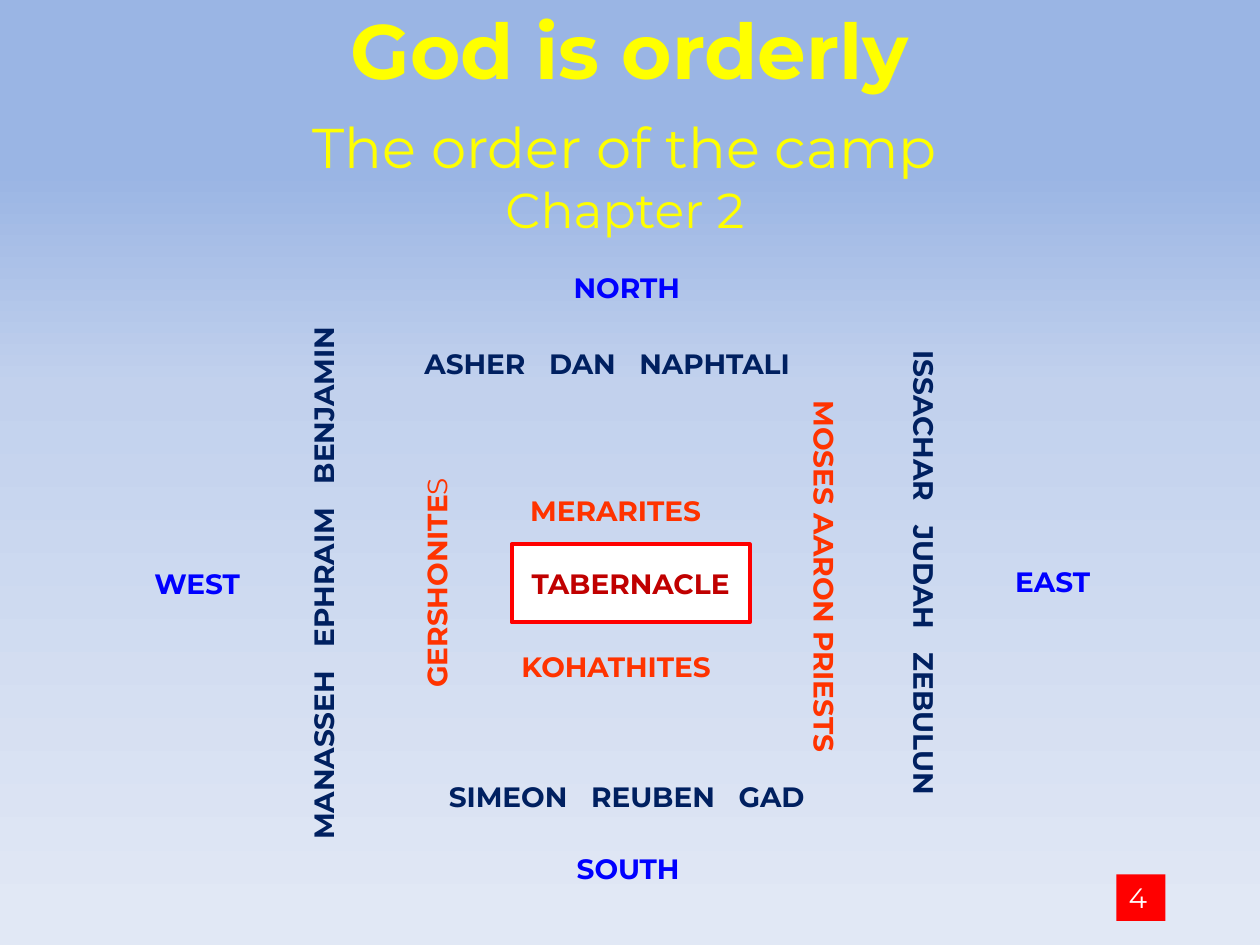
import copy

import pptx
import pptx.dml.color
import pptx.enum.shapes
import pptx.enum.text
import pptx.util

RGB = pptx.dml.color.RGBColor
ALIGN = pptx.enum.text.PP_ALIGN
ANCHOR = pptx.enum.text.MSO_ANCHOR
RECT = pptx.enum.shapes.MSO_SHAPE.RECTANGLE

YELLOW = RGB(0xFF, 0xFF, 0x00)
WHITE = RGB(0xFF, 0xFF, 0xFF)
RED = RGB(0xFF, 0x00, 0x00)
DARK_RED = RGB(0xC0, 0x00, 0x00)
ORANGE = RGB(0xFF, 0x33, 0x00)
NAVY = RGB(0x00, 0x20, 0x60)
BLUE = RGB(0x00, 0x00, 0xFF)
SKY = [(0.18, RGB(0x9A, 0xB5, 0xE4)), (0.41, RGB(0xC2, 0xD1, 0xED)),
       (0.97, RGB(0xE1, 0xE8, 0xF5))]

FONT = "Montserrat"
CELL = 0.1  # the slide is a grid of 100 columns by 75 rows
COLS, ROWS = 100, 75
UP, DOWN = "vert270", "vert"


def place(box, cells):
    """Turn cells counted from the box corner into slide lengths."""
    x, y, w, h = cells
    return [pptx.util.Inches(n * CELL) for n in (box[0] + x, box[1] + y, w, h)]


def write(sp, text, color, size=16, bold=True, align=ALIGN.CENTER,
          anchor=ANCHOR.TOP, turn=None):
    tf = sp.text_frame
    tf.text = text
    tf.word_wrap = True
    tf.auto_size = pptx.enum.text.MSO_AUTO_SIZE.NONE
    tf.vertical_anchor = anchor
    if turn:
        tf._txBody.bodyPr.set("vert", turn)
    for p in tf.paragraphs:
        p.alignment = align
        for r in p.runs:
            r.font.name, r.font.size = FONT, pptx.util.Pt(size)
            r.font.bold, r.font.color.rgb = bold, color
    return tf


def add_label(s, box, cells, text, color, **style):
    return write(s.shapes.add_textbox(*place(box, cells)), text, color, **style)


def add_block(s, box, cells, fill, line=None):
    sp = s.shapes.add_shape(RECT, *place(box, cells))
    sp.shadow.inherit = False
    sp.fill.solid()
    sp.fill.fore_color.rgb = fill
    if line is None:
        sp.line.fill.background()
    else:
        sp.line.color.rgb = line
        sp.line.width = pptx.util.Pt(2.25)
    return sp


def paint_background(s):
    fill = s.background.fill
    fill.gradient()
    fill.gradient_angle = 270
    stops = fill._fill._gradFill.gsLst
    stops.append(copy.deepcopy(stops[-1]))
    for stop, (position, color) in zip(fill.gradient_stops, SKY):
        stop.position, stop.color.rgb = position, color


def add_heading(s, box):
    title = s.shapes.title
    title.left, title.top, title.width, title.height = place(box, (0, -0.3, COLS, 8.4))
    write(title, "God is orderly", YELLOW, size=44)
    tf = add_label(s, box, (-0.4, 8.4, COLS, 11.1),
                   "The order of the camp\nChapter 2", YELLOW, size=32, bold=False)
    tf.paragraphs[1].runs[0].font.size = pptx.util.Pt(28)


def add_camp(s, box):
    # Compass points
    for text, cells in [("NORTH", (34.1, 1, 11.3, 2.7)),
                        ("SOUTH", (34.4, 47.1, 10.9, 2.7)),
                        ("EAST", (68.5, 24.3, 10.1, 2.9)),
                        ("WEST", (0.6, 24.5, 10.1, 1.8))]:
        add_label(s, box, cells, text, BLUE)

    # Three tribes on each side
    for tribes, cells, turn, align in [
            (("ASHER", "DAN", "NAPHTALI"), (22.7, 7, 34.6, 3.1), None, ALIGN.LEFT),
            (("SIMEON", "REUBEN", "GAD"), (22.8, 41.4, 33.9, 2.9), None, ALIGN.CENTER),
            (("MANASSEH", "EPHRAIM", "BENJAMIN"), (13.8, 4.2, 3.8, 44.2), UP, ALIGN.CENTER),
            (("ISSACHAR", "JUDAH", "ZEBULUN"), (62, 5, 3.2, 40.9), DOWN, ALIGN.CENTER)]:
        add_label(s, box, cells, "   ".join(tribes), NAVY, turn=turn, align=align)

    # Levites around the centre
    add_label(s, box, (31.1, 18.7, 17.3, 2.3), "MERARITES", ORANGE, align=ALIGN.LEFT)
    add_label(s, box, (30.4, 31.1, 18.9, 2.3), "KOHATHITES", ORANGE, align=ALIGN.LEFT)
    add_label(s, box, (51, 10.1, 6.3, 31.3), "MOSES AARON PRIESTS", ORANGE, turn=DOWN)
    tf = add_label(s, box, (22.8, 16.2, 5.5, 20.1), "GERSHONITE", ORANGE, turn=UP)
    r = tf.paragraphs[0].add_run()
    r.text = "S"
    r.font.name, r.font.size = FONT, pptx.util.Pt(16)
    r.font.bold, r.font.color.rgb = False, ORANGE

    # Tabernacle
    sp = add_block(s, box, (30.6, 23.2, 18.9, 6.2), WHITE, line=RED)
    write(sp, "TABERNACLE", DARK_RED, anchor=ANCHOR.MIDDLE)


def add_page_number(s, box):
    sp = add_block(s, box, (0, 0, 3.9, 3.7), RED)
    write(sp, "4", WHITE, bold=False, align=ALIGN.LEFT)


def main():
    prs = pptx.Presentation()
    prs.slide_width = pptx.util.Inches(COLS * CELL)
    prs.slide_height = pptx.util.Inches(ROWS * CELL)
    s = prs.slides.add_slide(prs.slide_layouts[5])
    paint_background(s)
    add_heading(s, (0, 0))
    add_camp(s, (10, 20))
    add_page_number(s, (88.6, 69.4))
    prs.save("out.pptx")


if __name__ == "__main__":
    main()
